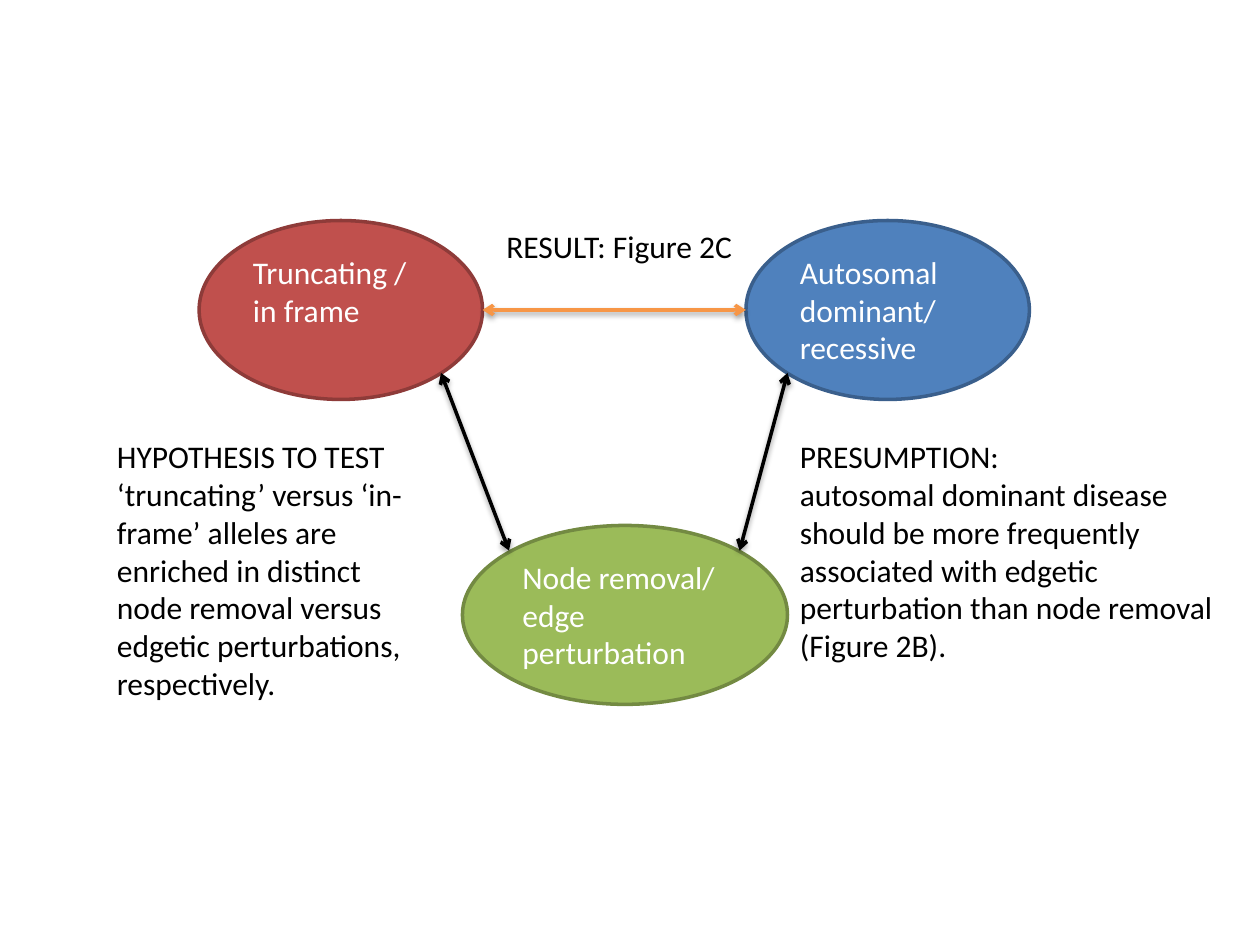
from lxml.etree import SubElement
from pptx import Presentation
from pptx.dml.color import RGBColor
from pptx.enum.shapes import MSO_CONNECTOR, MSO_SHAPE
from pptx.enum.text import MSO_ANCHOR, PP_ALIGN
from pptx.oxml import parse_xml
from pptx.oxml.ns import nsdecls, qn
from pptx.util import Inches, Pt


def rgb(code):
    return RGBColor.from_string(code)


def write(shape, lines, color, wrap=True):
    frame = shape.text_frame
    frame.word_wrap = wrap
    frame.vertical_anchor = MSO_ANCHOR.TOP
    for i, line in enumerate(lines):
        para = frame.paragraphs[0] if i == 0 else frame.add_paragraph()
        para.alignment = PP_ALIGN.LEFT
        run = para.add_run()
        run.text = line
        run.font.name = "Calibri"
        run.font.size = Pt(18)
        run.font.color.rgb = rgb(color)


deck = Presentation()
deck.slide_width = Inches(10)
deck.slide_height = Inches(7.5)
slide = deck.slides.add_slide(deck.slide_layouts[6])
shapes = slide.shapes

# Concept ellipses: left, top, width, fill, line, text
nodes = [
    (1.58, 1.75, 2.25, "C0504D", "8E3B39", ["Truncating /", "in frame"]),
    (3.67, 4.17, 2.58, "9BBB59", "738A42", ["Node removal/ edge perturbation"]),
    (5.92, 1.75, 2.25, "4F81BD", "3A5F8C", ["Autosomal dominant/ recessive"]),
]
for left, top, width, fill, edge, lines in nodes:
    node = shapes.add_shape(MSO_SHAPE.OVAL, Inches(left), Inches(top),
                            Inches(width), Inches(1.42))
    node.shadow.inherit = False
    node.fill.solid()
    node.fill.fore_color.rgb = rgb(fill)
    node.line.color.rgb = rgb(edge)
    node.line.width = Pt(2)
    write(node, lines, "FFFFFF")

# Double-headed arrows with a soft shadow: start, end, colour
shadow = f"""<a:effectLst {nsdecls("a")}>
  <a:outerShdw blurRad="40000" dist="20000" dir="5400000" rotWithShape="0">
    <a:srgbClr val="000000"><a:alpha val="38000"/></a:srgbClr>
  </a:outerShdw>
</a:effectLst>"""
links = [
    (6.25, 2.96, 5.87, 4.37, "000000"),
    (3.5, 2.96, 4.04, 4.37, "000000"),
    (3.83, 2.46, 5.92, 2.46, "F79646"),
]
for x1, y1, x2, y2, color in links:
    link = shapes.add_connector(MSO_CONNECTOR.STRAIGHT, Inches(x1), Inches(y1),
                                Inches(x2), Inches(y2))
    link.line.color.rgb = rgb(color)
    link.line.width = Pt(2)
    for end in ("a:headEnd", "a:tailEnd"):
        SubElement(link.line._get_or_add_ln(), qn(end), type="arrow")
    link._element.spPr.append(parse_xml(shadow))

# Captions: left, top, width, height, wrap, text
notes = [
    (6.25, 3.42, 3.5, 1.92, True, [
        "PRESUMPTION:",
        "autosomal dominant disease should be more frequently associated "
        "with edgetic perturbation than node removal (Figure 2B)."]),
    (0.83, 3.42, 2.5, 2.22, True, [
        "HYPOTHESIS TO TEST",
        "‘truncating’ versus ‘in-frame’ alleles are enriched in distinct "
        "node removal versus edgetic perturbations, respectively."]),
    (3.92, 1.75, 2.01, 0.4, False, ["RESULT: Figure 2C"]),
]
for left, top, width, height, wrap, lines in notes:
    note = shapes.add_textbox(Inches(left), Inches(top),
                              Inches(width), Inches(height))
    write(note, lines, "000000", wrap)

deck.save("out.pptx")
